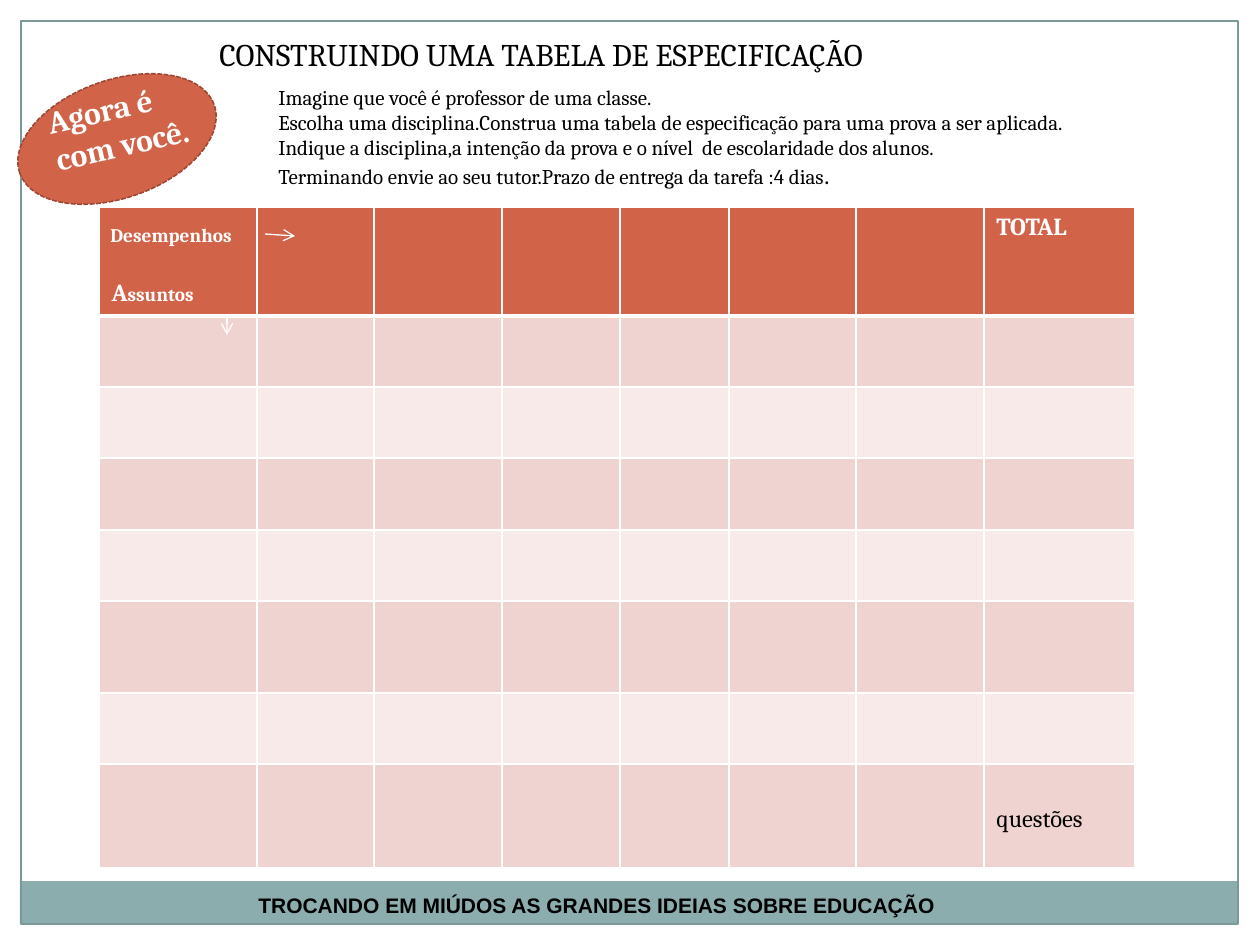
from dataclasses import dataclass

from lxml.etree import SubElement
from pptx import Presentation
from pptx.dml.color import RGBColor
from pptx.enum.dml import MSO_LINE
from pptx.enum.shapes import MSO_CONNECTOR, MSO_SHAPE
from pptx.enum.text import MSO_ANCHOR
from pptx.oxml.ns import qn
from pptx.util import Emu, Pt


@dataclass(frozen=True)
class Theme:
    accent: str = "D16349"
    accent_dark: str = "9B4936"
    row_odd: str = "EED3D0"
    row_even: str = "F7EAE9"
    band: str = "8CADAE"
    frame: str = "7C999A"
    white: str = "FFFFFF"
    black: str = "000000"
    serif: str = "Cambria"
    sans: str = "Arial"
    title: int = 18
    cell: int = 14
    body: int = 12
    label: int = 11


THEME = Theme()
PX = 914400 / 126

# Each text box: place, rotation, font, colour, bold, paragraphs of (text, size) runs
TEXTS = {
    "title": ((207, 29, 837, 50), 0, THEME.serif, THEME.black, False,
              [[("CONSTRUINDO UMA TABELA DE ESPECIFICAÇÃO", THEME.title)]]),
    "instructions": ((266, 78, 955, 118), 0, THEME.serif, THEME.black, False, [
        [("Imagine que você é professor de uma classe.", THEME.body)],
        [("Escolha uma disciplina.Construa uma tabela de especificação "
          "para uma prova a ser aplicada.", THEME.body)],
        [("Indique a disciplina,a intenção da prova e o nível  de escolaridade "
          "dos alunos.", THEME.body)],
        [("Terminando envie ao seu tutor.Prazo de entrega da tarefa :4 dias", THEME.body),
         (".", THEME.cell)],
    ]),
    "badge": ((42, 78, 188, 127), 347.3, THEME.serif, THEME.white, True,
              [[("Agora é", THEME.title)], [("com você.", THEME.title)]]),
    "performance": ((98, 217, 166, 37), 0, THEME.serif, THEME.white, True,
                    [[("Desempenhos", THEME.label)]]),
    "footer": ((246, 886, 728, 38), 0, THEME.sans, THEME.black, True,
               [[("TROCANDO EM MIÚDOS AS GRANDES IDEIAS SOBRE EDUCAÇÃO", THEME.body)]]),
}
TABLE_LEFT, TABLE_TOP = 99, 207
COLUMNS = [158, 117, 128, 118, 109, 127, 128, 151]
ROWS = [109, 71, 71, 72, 71, 92, 71, 104]
# (row, column): runs, colour, bold, anchor, bottom margin
CELL_TEXTS = {
    (0, 0): ([("A", THEME.cell), ("ssuntos", THEME.label)], THEME.white, True,
             MSO_ANCHOR.BOTTOM, 8),
    (0, 7): ([("TOTAL", THEME.cell)], THEME.white, True, MSO_ANCHOR.TOP, 6),
    (7, 7): ([("questões", THEME.cell)], THEME.black, False, MSO_ANCHOR.BOTTOM, 34),
}
ARROWS = [(227, 315, 227, 335), (265, 234, 295, 236)]


def px(value):
    return Emu(round(value * PX))


def rgb(color):
    return RGBColor.from_string(color)


def add_runs(paragraph, runs, font, color, bold):
    for text, size in runs:
        run = paragraph.add_run()
        run.text = text
        run.font.name = font
        run.font.size = Pt(size)
        run.font.bold = bold
        run.font.color.rgb = rgb(color)


def add_text(slide, place, rotation, font, color, bold, paragraphs):
    box = slide.shapes.add_textbox(*map(px, place))
    box.rotation = rotation
    frame = box.text_frame
    frame.word_wrap = True
    for index, runs in enumerate(paragraphs):
        paragraph = frame.add_paragraph() if index else frame.paragraphs[0]
        add_runs(paragraph, runs, font, color, bold)


def add_plain_shape(slide, kind, place, fill=None, line=None, width=0.75):
    shape = slide.shapes.add_shape(kind, *map(px, place))
    shape.shadow.inherit = False
    if fill:
        shape.fill.solid()
        shape.fill.fore_color.rgb = rgb(fill)
    else:
        shape.fill.background()
    if line:
        shape.line.color.rgb = rgb(line)
        shape.line.width = Pt(width)
    else:
        shape.line.fill.background()
    return shape


def add_arrow(slide, ends):
    arrow = slide.shapes.add_connector(MSO_CONNECTOR.STRAIGHT, *map(px, ends))
    arrow.line.color.rgb = rgb(THEME.white)
    arrow.line.width = Pt(0.75)
    SubElement(arrow.line._get_or_add_ln(), qn("a:tailEnd"), type="arrow")
    SubElement(arrow._element.spPr, qn("a:effectLst"))


def set_borders(cell, is_header):
    properties = cell._tc.get_or_add_tcPr()
    widths = {"lnL": 1, "lnR": 1, "lnT": 1, "lnB": 3 if is_header else 1}
    for side, width in widths.items():
        line = SubElement(properties, qn(f"a:{side}"), w=str(Pt(width)))
        solid = SubElement(line, qn("a:solidFill"))
        SubElement(solid, qn("a:srgbClr"), val=THEME.white)


def add_specification_table(slide):
    place = (TABLE_LEFT, TABLE_TOP, sum(COLUMNS), sum(ROWS))
    table = slide.shapes.add_table(len(ROWS), len(COLUMNS), *map(px, place)).table
    for column, width in zip(table.columns, COLUMNS):
        column.width = px(width)
    for row_index, (row, height) in enumerate(zip(table.rows, ROWS)):
        row.height = px(height)
        is_header = row_index == 0
        stripe = THEME.row_odd if row_index % 2 else THEME.row_even
        for cell in row.cells:
            # The thick rule is shared by the header and the row below it
            set_borders(cell, is_header)
            cell.fill.solid()
            cell.fill.fore_color.rgb = rgb(THEME.accent if is_header else stripe)
    for cell in table.rows[1].cells:
        cell._tc.tcPr.find(qn("a:lnT")).set("w", str(Pt(3)))
    for position, (runs, color, bold, anchor, margin) in CELL_TEXTS.items():
        cell = table.cell(*position)
        cell.vertical_anchor = anchor
        cell.margin_bottom = px(margin)
        add_runs(cell.text_frame.paragraphs[0], runs, THEME.serif, color, bold)


def main():
    presentation = Presentation()
    presentation.slide_width, presentation.slide_height = px(1260), px(945)
    slide = presentation.slides.add_slide(presentation.slide_layouts[6])

    add_plain_shape(slide, MSO_SHAPE.RECTANGLE, (20, 881, 1218, 43), fill=THEME.band)
    add_plain_shape(slide, MSO_SHAPE.RECTANGLE, (21, 21, 1217, 903), line=THEME.frame)
    add_specification_table(slide)
    badge = add_plain_shape(slide, MSO_SHAPE.OVAL, (14, 80, 206, 118),
                            THEME.accent, THEME.accent_dark, 0.9)
    badge.rotation = 340.7
    badge.line.dash_style = MSO_LINE.SQUARE_DOT
    for text in TEXTS.values():
        add_text(slide, *text)
    for ends in ARROWS:
        add_arrow(slide, ends)

    presentation.save("out.pptx")


if __name__ == "__main__":
    main()
